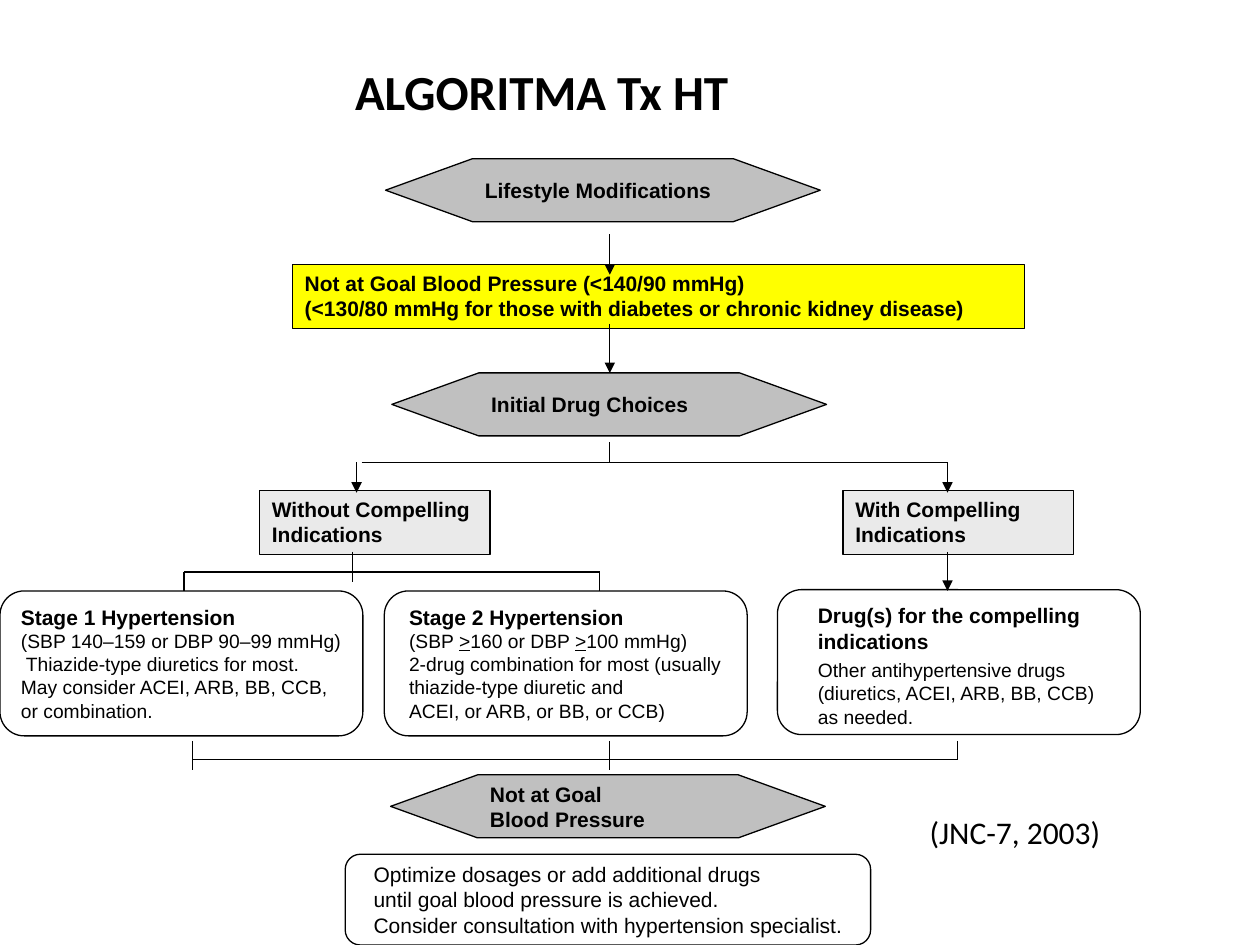
from dataclasses import dataclass
from lxml.etree import SubElement
from pptx import Presentation
from pptx.dml.color import RGBColor as Rgb
from pptx.enum.shapes import MSO_CONNECTOR as Link, MSO_SHAPE as Kind
from pptx.enum.text import MSO_ANCHOR as Anchor, PP_ALIGN as Align
from pptx.oxml.ns import qn
from pptx.util import Inches, Pt

COLS, ROWS = 100, 75
CELL = Inches(10) // COLS


@dataclass(frozen=True)
class Theme:
    ink: Rgb = Rgb(0, 0, 0)
    paper: Rgb = Rgb(255, 255, 255)
    step: Rgb = Rgb(0xC0, 0xC0, 0xC0)
    goal: Rgb = Rgb(255, 255, 0)
    group: Rgb = Rgb(0xEA, 0xEA, 0xEA)
    body: str = "Arial"
    head: str = "Calibri"
    title: int = 28
    cite: int = 18
    label: int = 12
    note: int = 11
    stroke: float = 0.75


T = Theme()


def grid(*cells):
    return [round(n * CELL) for n in cells]


def style(font, size, bold=False, face=T.body):
    font.name, font.size, font.bold = face, Pt(size), bold
    font.color.rgb = T.ink


def write(para, text, size, bold=False, face=T.body):
    """Fill a paragraph; newlines become breaks and >= becomes an underlined >."""
    para.alignment = Align.LEFT
    style(para.font, size, bold, face)
    for i, line in enumerate(text.split("\n")):
        if i:
            para.add_line_break()
        for j, part in enumerate(line.split(">=")):
            if j:
                mark = para.add_run()
                mark.text = ">"
                mark.font.underline = True
            if part:
                para.add_run().text = part


def node(slide, kind, box, fill):
    shape = slide.shapes.add_shape(kind, *grid(*box))
    shape.shadow.inherit = False
    shape.fill.solid()
    shape.fill.fore_color.rgb = fill
    shape.line.color.rgb = T.ink
    shape.line.width = Pt(T.stroke)
    return shape.text_frame


def step(slide, left, top, text):
    frame = node(slide, Kind.FLOWCHART_PREPARATION, (left, top, 34.5, 5), T.step)
    frame.word_wrap = False
    frame.vertical_anchor = Anchor.MIDDLE
    write(frame.paragraphs[0], text, T.label, True)


def banner(slide, left, top, width, fill, text):
    frame = node(slide, Kind.RECTANGLE, (left, top, width, 5.1), fill)
    frame.vertical_anchor = Anchor.TOP
    write(frame.paragraphs[0], text, T.label, True)


def card(slide, box, inset, anchor=Anchor.TOP):
    frame = node(slide, Kind.FLOWCHART_ALTERNATE_PROCESS, box, T.paper)
    frame.margin_left, frame.margin_right = grid(inset, 0.5)
    frame.vertical_anchor = anchor
    return frame


def stage(slide, left, top, inset, head, text, gap=None):
    """Card with a bold heading; a gap sets the text apart as a paragraph."""
    frame = card(slide, (left, top, 28.8, 11.5), inset)
    para = frame.paragraphs[0]
    if gap:
        write(para, head, T.label, True)
        para = frame.add_paragraph()
        para.space_before = Pt(gap)
        write(para, text, T.note)
    else:
        write(para, head + "\n" + text, T.note)
        style(para.runs[0].font, T.label, True)


def caption(slide, box, text, size, bold=False):
    frame = slide.shapes.add_textbox(*grid(*box)).text_frame
    frame.word_wrap = True
    write(frame.paragraphs[0], text, size, bold, T.head)


def line(slide, x1, y1, x2, y2, arrow=False):
    link = slide.shapes.add_connector(Link.STRAIGHT, *grid(x1, y1, x2, y2))
    link.line.color.rgb = T.ink
    link.line.width = Pt(T.stroke)
    if arrow:
        SubElement(link.line._get_or_add_ln(), qn("a:tailEnd"), type="triangle")
    SubElement(link._element.spPr, qn("a:effectLst"))


def nodes(slide):
    step(slide, 30.6, 12.6, "Lifestyle Modifications")
    banner(slide, 23.2, 21, 58.1, T.goal,
           "Not at Goal Blood Pressure (<140/90 mmHg)\n"
           "(<130/80 mmHg for those with diabetes or chronic kidney disease)")
    step(slide, 31.1, 29.6, "Initial Drug Choices")
    for left, word in ((20.6, "Without"), (66.9, "With")):
        banner(slide, left, 38.9, 18.3, T.group, f"{word} Compelling\nIndications")
    stage(slide, 0, 46.9, 1.1, "Stage 1 Hypertension",
          "(SBP 140–159 or DBP 90–99 mmHg)\n"
          " Thiazide-type diuretics for most.\n"
          "May consider ACEI, ARB, BB, CCB,\nor combination.")
    stage(slide, 30.5, 46.9, 1.4, "Stage 2 Hypertension",
          "(SBP >=160 or DBP >=100 mmHg)\n"
          "2-drug combination for most (usually thiazide-type diuretic and\n"
          "ACEI, or ARB, or BB, or CCB)")
    stage(slide, 61.7, 46.8, 2.65, "Drug(s) for the compelling indications",
          "Other antihypertensive drugs (diuretics, ACEI, ARB, BB, CCB)\n"
          "as needed.", gap=3)
    step(slide, 31, 61.5, "Not at Goal\nBlood Pressure")
    last = card(slide, (27.4, 67.8, 41.7, 7.2), 1.9, Anchor.MIDDLE)
    write(last.paragraphs[0],
          "Optimize dosages or add additional drugs\n"
          "until goal blood pressure is achieved.\n"
          "Consider consultation with hypertension specialist.", T.label)


def lines(slide):
    mid, right = 48.4, 75.2
    arrows = ((mid, 18.6, 21.8), (mid, 25.7, 29.6), (28.3, 36.7, 39.1),
              (right, 36.7, 39.1), (right, 43.8, 46.9))
    stems = ((mid, 35.1, 36.7), (28, 43.8, 46.2), (14.6, 45.4, 46.9),
             (47.6, 45.4, 46.9), (15.3, 58.8, 61.1), (mid, 58.8, 61.1),
             (76, 58.8, 60.3))
    bars = ((36.7, 28.7, right), (45.4, 14.6, 47.6), (60.3, 15.3, 76))
    for x, top, end in arrows:
        line(slide, x, top, x, end, arrow=True)
    for x, top, end in stems:
        line(slide, x, top, x, end)
    for y, start, end in bars:
        line(slide, start, y, end, y)


def main():
    deck = Presentation()
    deck.slide_width, deck.slide_height = grid(COLS, ROWS)
    slide = deck.slides.add_slide(deck.slide_layouts[6])
    caption(slide, (27.2, 4.4, 43.3, 5.7), "ALGORITMA Tx HT", T.title, True)
    nodes(slide)
    lines(slide)
    caption(slide, (72.8, 64, 25.2, 4), "(JNC-7, 2003)", T.cite)
    deck.save("out.pptx")


if __name__ == "__main__":
    main()
